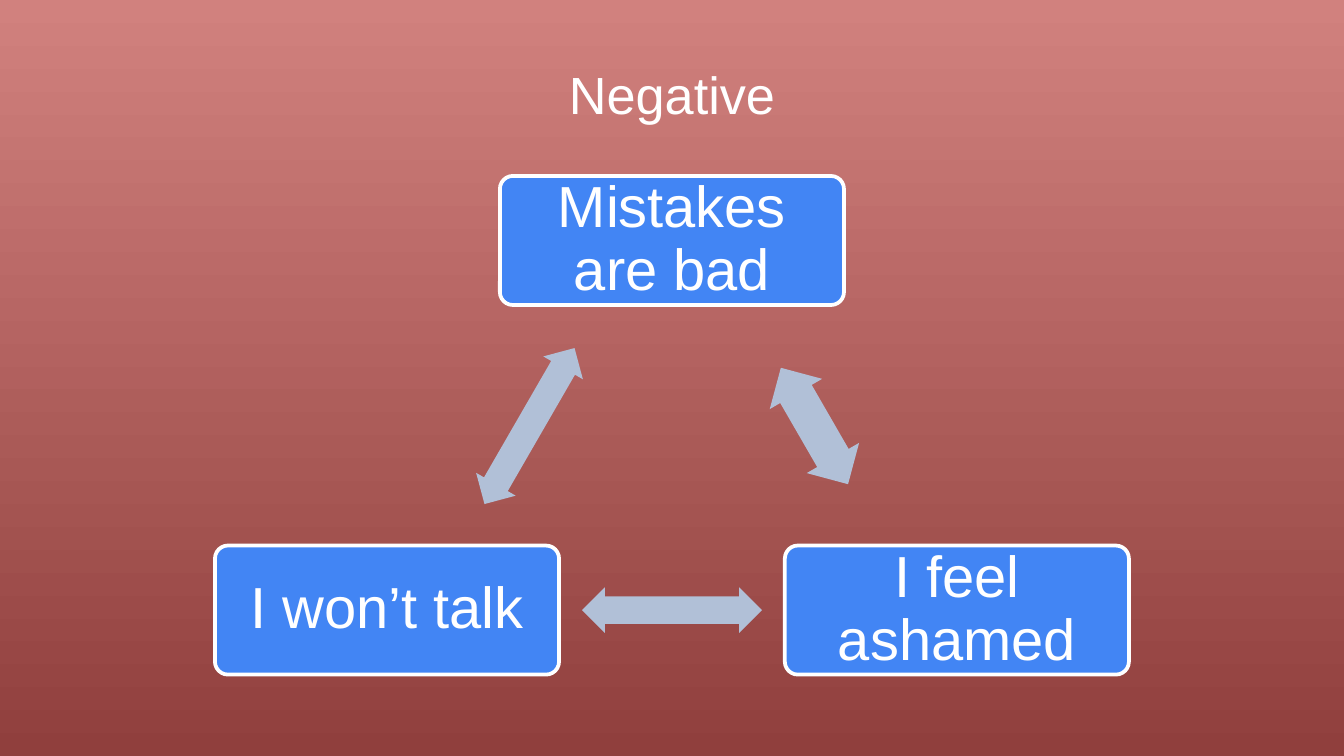
from dataclasses import dataclass

from pptx import Presentation
from pptx.dml.color import RGBColor
from pptx.enum.shapes import MSO_SHAPE
from pptx.enum.text import MSO_ANCHOR, PP_ALIGN
from pptx.util import Inches, Pt


@dataclass(frozen=True)
class Theme:
    font: str = "Arial"
    title_size: int = 28
    belief_size: int = 31
    text: str = "FFFFFF"
    box: str = "4285F4"
    arrow: str = "B1C0D7"
    sky: str = "D1817E"
    ground: str = "903F3D"


THEME = Theme()
SLIDE_WIDTH = 10
SLIDE_HEIGHT = SLIDE_WIDTH * 9 / 16
BOX_WIDTH, BOX_HEIGHT = 2.56, 0.96

# Text, centre x, centre y
BELIEFS = [
    ("Mistakes are bad", 5, 1.79),
    ("I feel ashamed", 7.12, 4.54),
    ("I won’t talk", 2.88, 4.54),
]

# Centre x, centre y, length, thickness, rotation
ARROWS = [
    (6.06, 3.17, 1, 0.45, 60),
    (5, 4.54, 1.34, 0.34, 180),
    (3.94, 3.17, 1.34, 0.34, 300),
]


def color(code):
    return RGBColor.from_string(code)


def paint_background(page):
    fill = page.background.fill
    fill.gradient()
    fill.gradient_angle = 270
    for stop, code in zip(fill.gradient_stops, (THEME.sky, THEME.ground)):
        stop.color.rgb = color(code)


def write_text(frame, text, size, line_spacing=None):
    frame.word_wrap = True
    frame.vertical_anchor = MSO_ANCHOR.MIDDLE
    para = frame.paragraphs[0]
    para.text = text
    para.alignment = PP_ALIGN.CENTER
    para.line_spacing = line_spacing
    para.font.name = THEME.font
    para.font.size = Pt(size)
    para.font.color.rgb = color(THEME.text)


def add_title(page, text):
    box = page.shapes.add_textbox(Inches(0.5), Inches(0.23), Inches(9), Inches(0.94))
    write_text(box.text_frame, text, THEME.title_size)


def add_centered_shape(page, kind, x, y, width, height, fill):
    """Add a flat filled shape whose middle is at x, y."""
    shape = page.shapes.add_shape(
        kind, Inches(x - width / 2), Inches(y - height / 2), Inches(width), Inches(height)
    )
    shape.shadow.inherit = False
    shape.fill.solid()
    shape.fill.fore_color.rgb = color(fill)
    return shape


def add_belief(page, text, x, y):
    box = add_centered_shape(
        page, MSO_SHAPE.ROUNDED_RECTANGLE, x, y, BOX_WIDTH, BOX_HEIGHT, THEME.box
    )
    box.adjustments[0] = 0.1
    box.line.color.rgb = color(THEME.text)
    box.line.width = Pt(2)
    frame = box.text_frame
    frame.margin_left = frame.margin_right = Inches(0.13)
    frame.margin_top = frame.margin_bottom = Inches(0.13)
    write_text(frame, text, THEME.belief_size, 0.9)


def add_arrow(page, x, y, length, thickness, rotation):
    arrow = add_centered_shape(
        page, MSO_SHAPE.LEFT_RIGHT_ARROW, x, y, length, thickness, THEME.arrow
    )
    arrow.adjustments[0] = 0.6
    arrow.adjustments[1] = 0.5
    arrow.rotation = rotation
    arrow.line.fill.background()


def main():
    deck = Presentation()
    deck.slide_width, deck.slide_height = Inches(SLIDE_WIDTH), Inches(SLIDE_HEIGHT)
    page = deck.slides.add_slide(deck.slide_layouts[6])
    paint_background(page)
    add_title(page, "Negative")
    for belief, arrow in zip(BELIEFS, ARROWS):
        add_belief(page, *belief)
        add_arrow(page, *arrow)
    deck.save("out.pptx")


if __name__ == "__main__":
    main()
